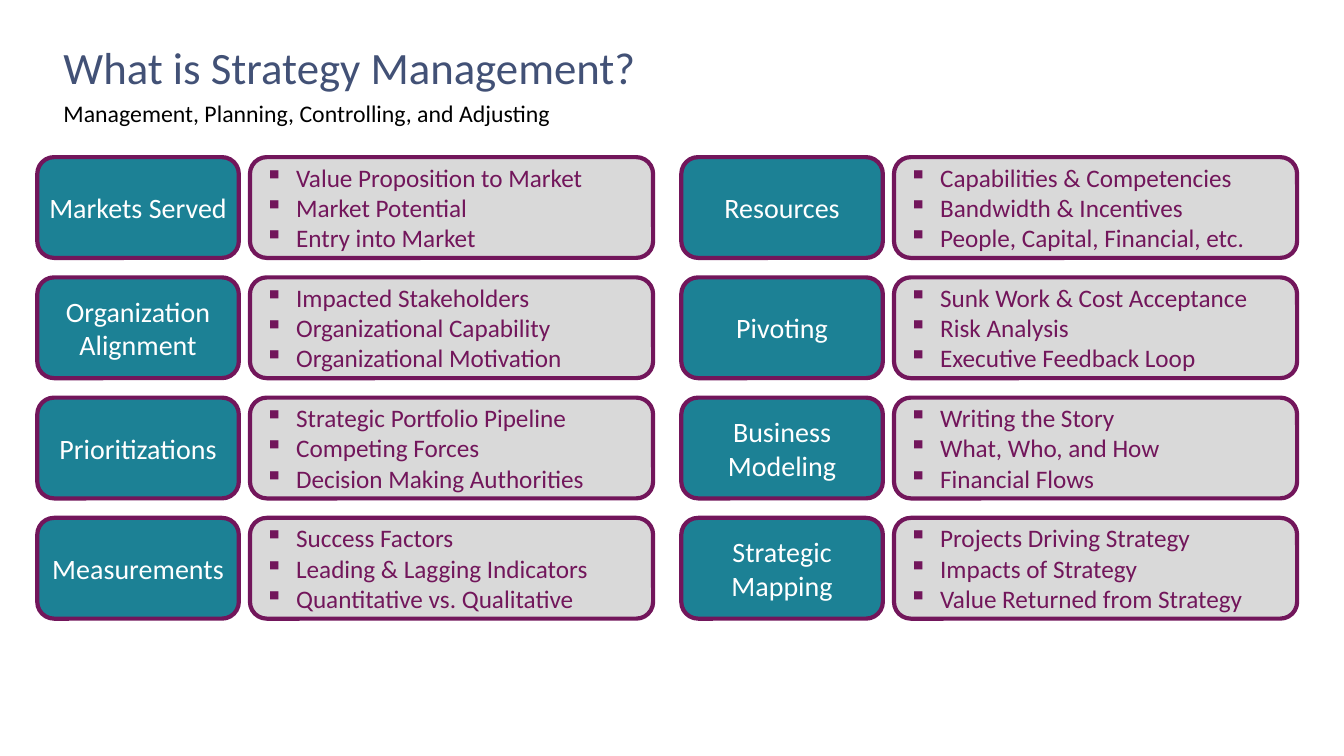
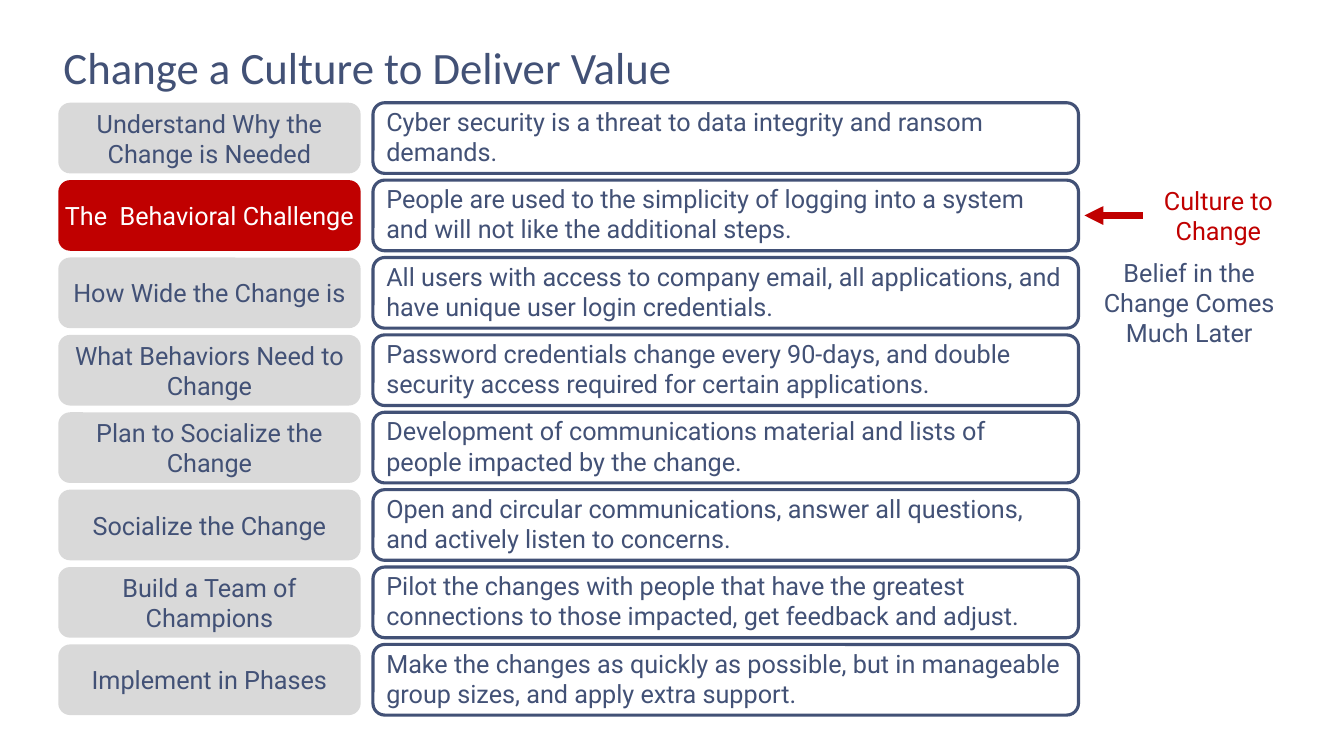
from dataclasses import dataclass

from lxml.etree import SubElement
from pptx import Presentation
from pptx.dml.color import RGBColor as RGB
from pptx.enum.shapes import MSO_CONNECTOR as Wire, MSO_SHAPE as Kind
from pptx.enum.text import MSO_ANCHOR as Anchor, MSO_AUTO_SIZE as Fit, PP_ALIGN as Align
from pptx.oxml.ns import qn
from pptx.util import Cm, Pt

# Content
STRATEGY = "What is Strategy Management?"
SUBTITLE = "Management, Planning, Controlling, and Adjusting"
TOPICS = [  # one list per column
    [
        ("Markets Served",
         ["Value Proposition to Market", "Market Potential", "Entry into Market"]),
        ("Organization Alignment",
         ["Impacted Stakeholders", "Organizational Capability", "Organizational Motivation"]),
        ("Prioritizations",
         ["Strategic Portfolio Pipeline", "Competing Forces", "Decision Making Authorities"]),
        ("Measurements",
         ["Success Factors", "Leading & Lagging Indicators", "Quantitative vs. Qualitative"]),
    ],
    [
        ("Resources",
         ["Capabilities & Competencies", "Bandwidth & Incentives",
          "People, Capital, Financial, etc."]),
        ("Pivoting",
         ["Sunk Work & Cost Acceptance", "Risk Analysis", "Executive Feedback Loop"]),
        ("Business Modeling",
         ["Writing the Story", "What, Who, and How", "Financial Flows"]),
        ("Strategic Mapping",
         ["Projects Driving Strategy", "Impacts of Strategy", "Value Returned from Strategy"]),
    ],
]

CULTURE = "Change a Culture to Deliver Value"
STEPS = [
    ("Understand Why the Change is Needed",
     "Cyber security is a threat to data integrity and ransom demands."),
    ("The  Behavioral Challenge",
     "People are used to the simplicity of logging into a system and will not like "
     "the additional steps."),
    ("How Wide the Change is",
     "All users with access to company email, all applications, and have unique user "
     "login credentials."),
    ("What Behaviors Need to Change",
     "Password credentials change every 90-days, and double security access required "
     "for certain applications."),
    ("Plan to Socialize the Change",
     "Development of communications material and lists of people impacted by the change."),
    ("Socialize the Change",
     "Open and circular communications, answer all questions, and actively listen to concerns."),
    ("Build a Team of Champions",
     "Pilot the changes with people that have the greatest connections to those impacted, "
     "get feedback and adjust."),
    ("Implement in Phases",
     "Make the changes as quickly as possible, but in manageable group sizes, and apply "
     "extra support."),
]
FOCUS = 1  # the step the arrow points at
CALL = "Culture to Change"
BELIEF = "Belief in the Change Comes Much Later"


@dataclass(frozen=True)
class Theme:
    navy: str = "425176"
    teal: str = "1C8195"
    plum: str = "72165B"
    gray: str = "D9D9D9"
    red: str = "C00000"
    white: str = "FFFFFF"
    black: str = "000000"
    sans: str = "Calibri"
    alt: str = "Roboto"
    title: float = 32
    label: float = 20
    body: float = 18
    sub: float = 17


T = Theme()
INSET = (0.25, 0.13, 0.25, 0.13)


def write(shape, text, size=T.body, font=T.sans, color=T.navy, align=Align.LEFT,
          anchor=Anchor.TOP, inset=INSET, bullet=None, space=None):
    """Fill a shape with one paragraph, or one for each item of a list."""
    frame = shape.text_frame
    frame.word_wrap, frame.auto_size = True, Fit.NONE
    frame.vertical_anchor = anchor
    (frame.margin_left, frame.margin_top,
     frame.margin_right, frame.margin_bottom) = map(Cm, inset)
    lines = [text] if isinstance(text, str) else text
    for i, line in enumerate(lines):
        para = frame.paragraphs[0] if i == 0 else frame.add_paragraph()
        if bullet:
            props = para._p.get_or_add_pPr()
            props.set("marL", str(Cm(0.79)))
            props.set("indent", str(-Cm(0.79)))
            SubElement(props, qn("a:buChar")).set("char", bullet)
        para.alignment = align
        if space:
            para.line_spacing = space
        run = para.add_run()
        run.text = line
        run.font.size, run.font.name = Pt(size), font
        run.font.color.rgb = RGB.from_string(color)


def card(slide, x, y, w, h, fill=None, edge=None, width=0):
    box = slide.shapes.add_shape(Kind.ROUNDED_RECTANGLE, Cm(x), Cm(y), Cm(w), Cm(h))
    box.shadow.inherit = False
    if fill:
        box.fill.solid()
        box.fill.fore_color.rgb = RGB.from_string(fill)
    else:
        box.fill.background()
    if edge:
        box.line.color.rgb = RGB.from_string(edge)
        box.line.width = Pt(width)
    else:
        box.line.fill.background()
    return box


def note(slide, text, x, y, w, h, **style):
    box = slide.shapes.add_textbox(Cm(x), Cm(y), Cm(w), Cm(h))
    write(box, text, **style)
    return box


def arrow(slide, start, side, x, y):
    """Run an arrow from the middle of a box's side to a point."""
    line = slide.shapes.add_connector(Wire.STRAIGHT, Cm(x), Cm(y), Cm(x), Cm(y))
    line.begin_connect(start, side)
    line.line.color.rgb = RGB.from_string(T.red)
    line.line.width = Pt(4.5)
    SubElement(line.line._get_or_add_ln(), qn("a:tailEnd")).set("type", "triangle")
    SubElement(line._element.spPr, qn("a:effectLst"))


def page(deck, text):
    slide = deck.slides.add_slide(deck.slide_layouts[5])
    head = slide.shapes.title
    head.left, head.top, head.width, head.height = Cm(1.35), Cm(0.81), Cm(31.14), Cm(1.68)
    write(head, text, size=T.title, anchor=Anchor.BOTTOM)
    return slide


def strategy(deck):
    slide = page(deck, STRATEGY)
    note(slide, SUBTITLE, 1.35, 2.29, 31.14, 1.04, size=T.sub, color=T.black, space=1.1)
    # Two columns of label and list pairs
    left, top, high = 0.94, 3.96, 2.54
    wide, list_w, gap = 5.08, 10.16, 0.28
    col_step, row_step = 16.23, 3.03
    for col, topics in enumerate(TOPICS):
        x = left + col * col_step
        for row, (name, items) in enumerate(topics):
            y = top + row * row_step
            write(card(slide, x, y, wide, high, T.teal, T.plum, 3), name, size=T.label,
                  color=T.white, align=Align.CENTER, anchor=Anchor.MIDDLE, inset=(0, 0, 0, 0))
            write(card(slide, x + wide + gap, y, list_w, high, T.gray, T.plum, 3), items,
                  color=T.plum, inset=(0.25, 0, 0.25, 0.13), bullet="▪")


def culture(deck):
    slide = page(deck, CULTURE)
    # Steps with their explanations
    left, top, high, step = 1.47, 2.59, 1.78, 1.95
    wide, text_w, gap = 7.62, 17.78, 0.31
    for row, (name, text) in enumerate(STEPS):
        y = top + row * step
        fill, ink = (T.red, T.white) if row == FOCUS else (T.gray, T.navy)
        write(card(slide, left, y, wide, high, fill), name, font=T.alt, color=ink,
              align=Align.CENTER, anchor=Anchor.MIDDLE, inset=(0, 0.13, 0, 0.13))
        write(card(slide, left + wide + gap, y, text_w, high, None, T.navy, 2.25), text,
              font=T.alt, inset=(0.25, 0, 0.25, 0))
    # Side notes and arrow beside the focus step
    y = top + FOCUS * step
    style = dict(font=T.alt, align=Align.CENTER)
    call = note(slide, CALL, 28.8, y, 3.81, high, color=T.red, **style)
    edge = left + wide + gap + text_w
    arrow(slide, call, 1, edge + 0.15, y + high / 2)
    note(slide, BELIEF, edge + 0.25, y + high + 0.03, 5.08, 2.54, **style)


def main():
    deck = Presentation()
    deck.slide_width, deck.slide_height = Cm(33.87), Cm(19.05)
    strategy(deck)
    culture(deck)
    deck.save("out.pptx")


if __name__ == "__main__":
    main()
